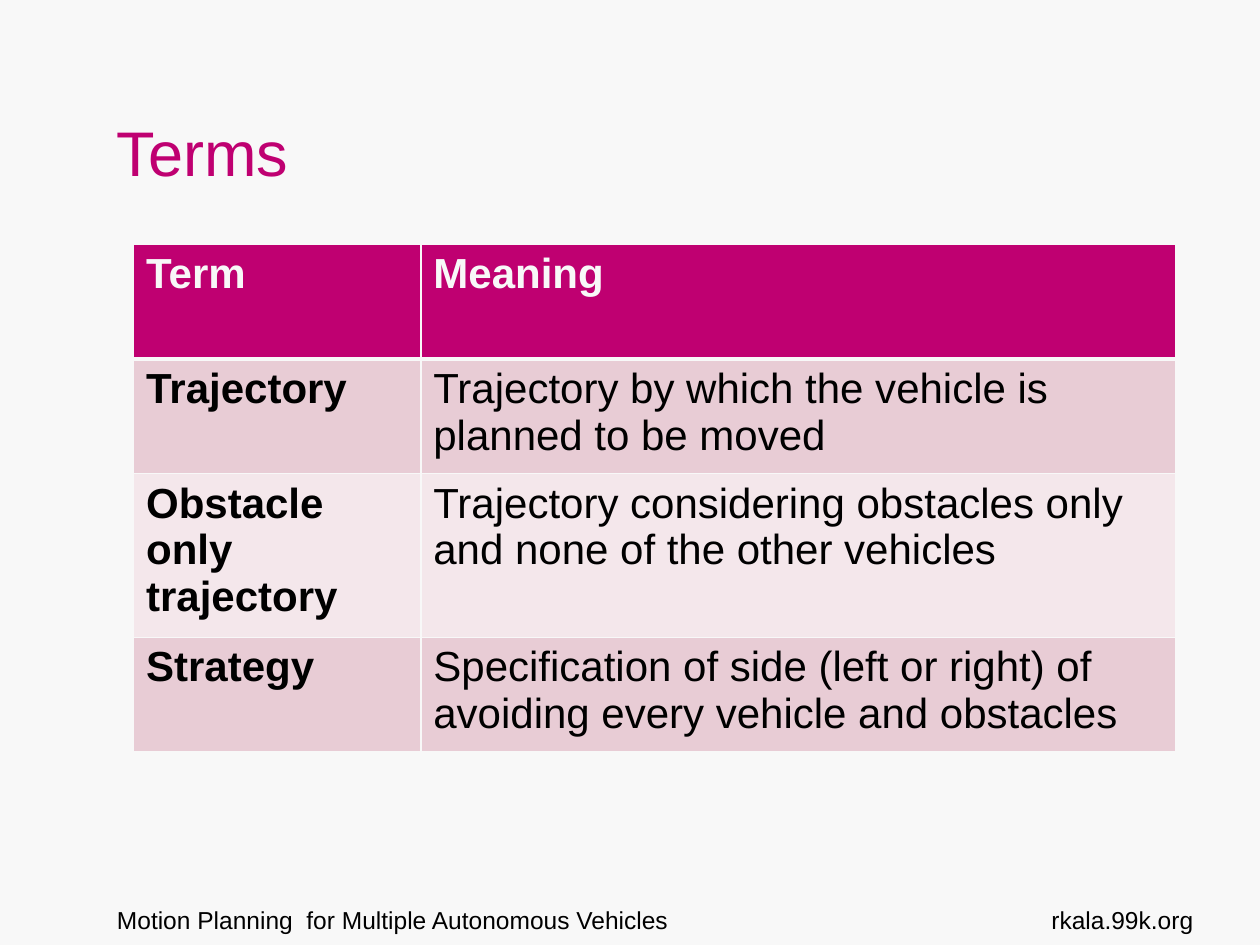
from dataclasses import dataclass

from lxml.etree import SubElement
from pptx import Presentation
from pptx.dml.color import RGBColor
from pptx.enum.text import MSO_ANCHOR, PP_ALIGN
from pptx.oxml.ns import qn
from pptx.util import Inches, Pt


@dataclass(frozen=True)
class Theme:
    font: str = "Arial"
    paper: str = "F8F8F8"
    accent: str = "BF0071"
    ink: str = "000000"
    bands: tuple = ("E8CCD5", "F4E7EB")
    title: int = 36
    body: int = 24
    footer: int = 14


THEME = Theme()
ROWS = [
    ("Term", "Meaning"),
    ("Trajectory", "Trajectory by which the vehicle is planned to be moved"),
    ("Obstacle only trajectory",
     "Trajectory considering obstacles only and none of the other vehicles"),
    ("Strategy",
     "Specification of side (left or right) of avoiding every vehicle and obstacles"),
]


def style(p, size, color, bold=False):
    p.font.name = THEME.font
    p.font.size = Pt(size)
    p.font.bold = bold
    p.font.color.rgb = RGBColor.from_string(color)


def add_text(s, box, text, size, color, align=PP_ALIGN.LEFT,
             anchor=MSO_ANCHOR.TOP, wrap=True):
    tf = s.shapes.add_textbox(*map(Inches, box)).text_frame
    tf.word_wrap = wrap
    tf.vertical_anchor = anchor
    p = tf.paragraphs[0]
    p.text = text
    p.alignment = align
    style(p, size, color)


def set_borders(cell, bottom):
    """Draw the cell's borders; they must precede its fill in the XML."""
    tc_pr = cell._tc.get_or_add_tcPr()
    for side, width in (("L", 1), ("R", 1), ("T", 1), ("B", bottom)):
        ln = SubElement(tc_pr, qn(f"a:ln{side}"), w=str(Pt(width)))
        fill = SubElement(ln, qn("a:solidFill"))
        SubElement(fill, qn("a:srgbClr"), val=THEME.paper)


def add_terms_table(s, left, top, widths, row_height):
    table = s.shapes.add_table(
        len(ROWS), len(widths), Inches(left), Inches(top),
        Inches(sum(widths)), Inches(row_height * len(ROWS))).table
    for column, width in zip(table.columns, widths):
        column.width = Inches(width)
    for i, row in enumerate(ROWS):
        header = i == 0
        fill = THEME.accent if header else THEME.bands[(i - 1) % 2]
        for j, text in enumerate(row):
            cell = table.cell(i, j)
            set_borders(cell, bottom=3 if header else 1)
            cell.fill.solid()
            cell.fill.fore_color.rgb = RGBColor.from_string(fill)
            cell.text = text
            style(cell.text_frame.paragraphs[0], THEME.body,
                  THEME.paper if header else THEME.ink, bold=header or j == 0)
            if header:
                continue
            # The header's thick rule is shared with the row below it
            if i == 1:
                cell._tc.tcPr.find(qn("a:lnT")).set("w", str(Pt(3)))


def main():
    prs = Presentation()
    prs.slide_width, prs.slide_height = Inches(10), Inches(7.5)
    s = prs.slides.add_slide(prs.slide_layouts[6])
    s.background.fill.solid()
    s.background.fill.fore_color.rgb = RGBColor.from_string(THEME.paper)

    # Title
    add_text(s, (0.83, 0.3, 6.77, 1.25), "Terms", THEME.title, THEME.accent,
             anchor=MSO_ANCHOR.BOTTOM, wrap=False)

    # Terms and their meanings
    add_terms_table(s, 1.06, 1.94, (2.28, 5.99), 0.91)

    # Footer
    add_text(s, (0.83, 7.13, 6.93, 0.52),
             "Motion Planning  for Multiple Autonomous Vehicles",
             THEME.footer, THEME.ink)
    add_text(s, (8.07, 7.13, 1.5, 0.52), "rkala.99k.org",
             THEME.footer, THEME.ink, align=PP_ALIGN.RIGHT)

    prs.save("out.pptx")


if __name__ == "__main__":
    main()
